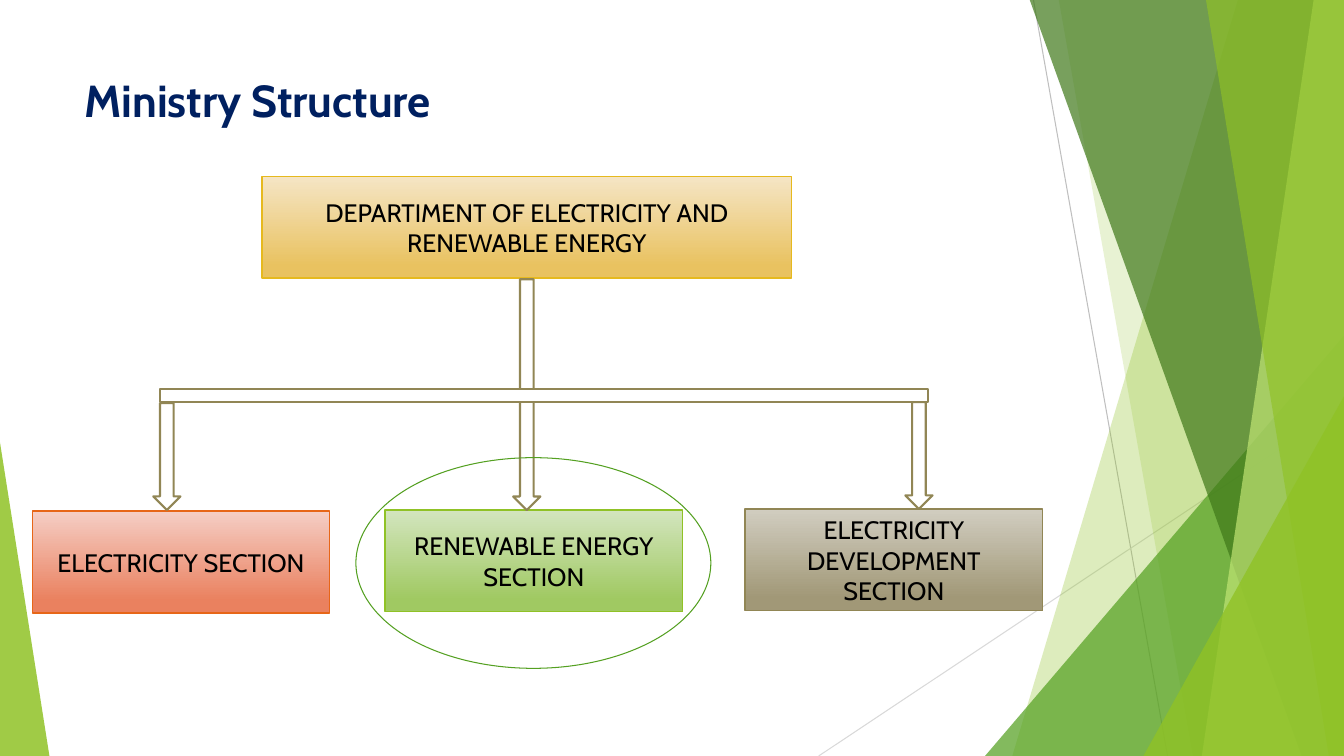
from dataclasses import dataclass

from lxml import etree
from pptx import Presentation
from pptx import util as u
from pptx.dml.color import RGBColor
from pptx.enum import shapes, text
from pptx.oxml.ns import qn

SHAPE = shapes.MSO_SHAPE


@dataclass(frozen=True)
class Theme:
    font: str = "Cabin"
    title_size: int = 32
    box_size: int = 18
    navy: str = "002060"
    black: str = "000000"
    white: str = "FFFFFF"
    lime: str = "90C226"
    pale_lime: str = "C0E474"
    green: str = "54A021"
    dark_green: str = "3F7819"
    olive: str = "918655"
    grey: str = "BFBFBF"
    light_grey: str = "D9D9D9"
    # Each box style: gradient top, gradient bottom, outline
    gold_box: tuple = ("F5E5C5", "E9C260", "E6B91E")
    red_box: tuple = ("F5CEC5", "EA815F", "E76618")
    green_box: tuple = ("D3E5BE", "A0C962", "90C226")
    olive_box: tuple = ("D1CDC0", "A19877", "918655")


def rgb(color):
    return RGBColor.from_string(color)


class ChartSlide:
    def __init__(self, slide, theme):
        self.slide = slide
        self.theme = theme

    def paint(self, shape, fill=None, opacity=100, line=None, weight=1.0):
        """Fill and outline a shape; None means no fill or no line."""
        shape.shadow.inherit = False
        if fill is None:
            shape.fill.background()
        else:
            shape.fill.solid()
            shape.fill.fore_color.rgb = rgb(fill)
            if opacity < 100:
                color = shape._element.spPr.find(f"{qn('a:solidFill')}/{qn('a:srgbClr')}")
                etree.SubElement(color, qn("a:alpha"), val=str(opacity * 1000))
        if line is None:
            shape.line.fill.background()
        else:
            shape.line.color.rgb = rgb(line)
            shape.line.width = u.Pt(weight)
        return shape

    def preset(self, kind, left, top, width, height, adjust=None, **look):
        shape = self.slide.shapes.add_shape(
            kind, u.Inches(left), u.Inches(top), u.Inches(width), u.Inches(height))
        if adjust is not None:
            shape.adjustments[0] = adjust
        return self.paint(shape, **look)

    def band(self, top_left, bottom_left, fill, opacity):
        """Slanted full-height band that reaches the right edge of the slide."""
        corners = [(top_left, -0.01), (13.33, -0.01), (13.33, 7.5), (bottom_left, 7.5)]
        points = [(u.Inches(x), u.Inches(y)) for x, y in corners]
        builder = self.slide.shapes.build_freeform(*points[0])
        builder.add_line_segments(points[1:], close=True)
        self.paint(builder.convert_to_shape(), fill, opacity)

    def hairline(self, x1, y1, x2, y2, color):
        line = self.slide.shapes.add_connector(
            shapes.MSO_CONNECTOR.STRAIGHT,
            u.Inches(x1), u.Inches(y1), u.Inches(x2), u.Inches(y2))
        line.line.color.rgb = rgb(color)
        line.line.width = u.Pt(0.75)
        etree.SubElement(line._element.spPr, qn("a:effectLst"))

    def set_words(self, frame, words, size, color, align, anchor, bold=False):
        frame.text = words
        frame.word_wrap = True
        frame.vertical_anchor = anchor
        paragraph = frame.paragraphs[0]
        paragraph.alignment = align
        font = paragraph.runs[0].font
        font.name = self.theme.font
        font.size = u.Pt(size)
        font.bold = bold
        font.color.rgb = rgb(color)

    def title(self, words):
        heading = self.slide.shapes.title
        heading.left, heading.top = u.Inches(0.74), u.Inches(0.67)
        heading.width, heading.height = u.Inches(9.4), u.Inches(0.87)
        self.set_words(heading.text_frame, words, self.theme.title_size, self.theme.navy,
                       text.PP_ALIGN.LEFT, text.MSO_ANCHOR.TOP, bold=True)

    def unit(self, words, left, top, width, style):
        """Organisation box with a vertical gradient."""
        upper, lower, outline = style
        box = self.preset(SHAPE.RECTANGLE, left, top, width, 1.01, line=outline)
        box.fill.gradient()
        box.fill.gradient_angle = 270
        for stop, color, position in zip(box.fill.gradient_stops, (upper, lower), (0, 0.88)):
            stop.color.rgb = rgb(color)
            stop.position = position
        self.set_words(box.text_frame, words, self.theme.box_size, self.theme.black,
                       text.PP_ALIGN.CENTER, text.MSO_ANCHOR.MIDDLE)

    def pipe(self, kind, left, top, width, height):
        """White outlined arrow or bar that joins the boxes."""
        self.preset(kind, left, top, width, height,
                    fill=self.theme.white, line=self.theme.olive, weight=1.5)

    def ring(self, left, top, width, height):
        self.preset(SHAPE.OVAL, left, top, width, height,
                    line=self.theme.green, weight=0.75)


def draw_backdrop(page):
    theme = page.theme
    page.hairline(10.25, 0, 11.58, 7.5, theme.grey)
    page.hairline(13.33, 4.03, 8.12, 7.5, theme.light_grey)
    page.band(12.28, 10.04, theme.lime, 30)
    page.band(10.5, 11.83, theme.lime, 20)
    page.preset(SHAPE.ISOSCELES_TRIANGLE, 9.77, 3.33, 3.56, 4.17, 1,
                fill=theme.green, opacity=72)
    page.band(10.21, 12.91, theme.dark_green, 70)
    page.band(13.03, 11.92, theme.pale_lime, 70)
    page.band(11.96, 13.18, theme.lime, 65)
    page.preset(SHAPE.ISOSCELES_TRIANGLE, 11.34, 3.93, 1.99, 3.57, 1,
                fill=theme.lime, opacity=80)
    page.preset(SHAPE.ISOSCELES_TRIANGLE, 0, 4.39, 0.49, 3.11, 0,
                fill=theme.lime, opacity=85)


def draw_structure(page):
    theme = page.theme
    page.unit("DEPARTIMENT OF ELECTRICITY AND RENEWABLE ENERGY", 2.6, 1.75, 5.25,
              theme.gold_box)
    sections = [
        ("ELECTRICITY SECTION", 0.32, 5.07, theme.red_box),
        ("RENEWABLE ENERGY SECTION", 3.82, 5.06, theme.green_box),
        ("ELECTRICITY DEVELOPMENT SECTION", 7.39, 5.05, theme.olive_box),
    ]
    for words, left, top, style in sections:
        page.unit(words, left, top, 2.95, style)
    for left, top, height in [(5.09, 2.77, 2.29), (1.52, 4, 1.06), (8.98, 3.99, 1.06)]:
        page.pipe(SHAPE.DOWN_ARROW, left, top, 0.27, height)
    page.pipe(SHAPE.RECTANGLE, 1.59, 3.86, 7.61, 0.13)
    page.ring(3.53, 4.54, 3.52, 2.09)


def main():
    deck = Presentation()
    deck.slide_width, deck.slide_height = u.Inches(13.33), u.Inches(7.5)
    page = ChartSlide(deck.slides.add_slide(deck.slide_layouts[5]), Theme())
    draw_backdrop(page)
    page.title("Ministry Structure")
    draw_structure(page)
    deck.save("out.pptx")


if __name__ == "__main__":
    main()
